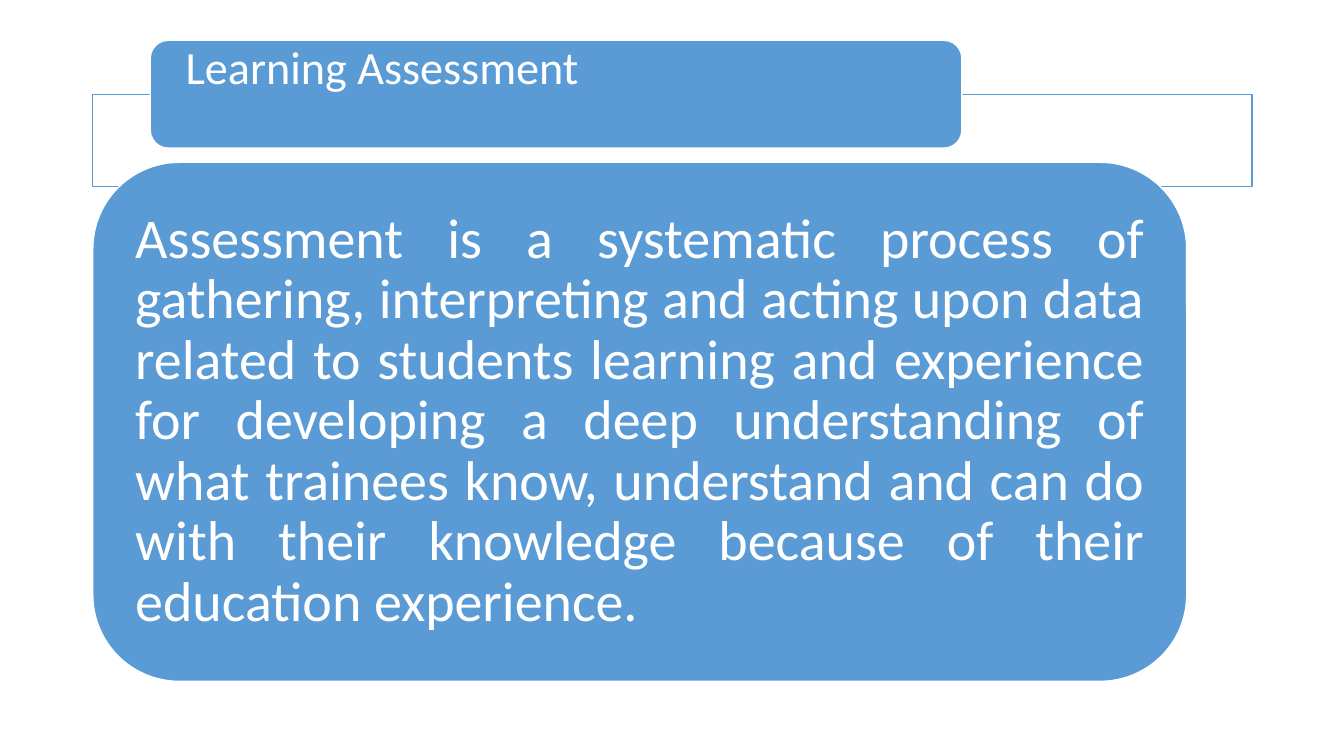
from pptx import Presentation
from pptx.dml.color import RGBColor
from pptx.enum.shapes import MSO_SHAPE
from pptx.enum.text import MSO_ANCHOR, MSO_AUTO_SIZE, PP_ALIGN
from pptx.util import Inches, Pt

# Content
HEADING = "Learning Assessment"
BODY = (
    "Assessment is a systematic process of gathering, interpreting and acting "
    "upon data related to students learning and experience for developing a "
    "deep understanding of what trainees know, understand and can do with "
    "their knowledge because of their education experience."
)

THEME = {
    "blue": RGBColor(0x5B, 0x9B, 0xD5),
    "white": RGBColor(0xFF, 0xFF, 0xFF),
    "font": "Calibri",
    "heading": Pt(33),
    "body": Pt(40),
    "line": Pt(1),
}

# Places: left, top, width, height
FRAME = (0.92, 0.94, 11.5, 0.91)
TAB = (1.49, 0.4, 8.05, 1.07)
TITLE = (1.54, 0.44, 7.95, 0.96)
PANEL = (0.92, 1.61, 10.85, 5.15)


def add_box(slide, kind, place, fill, line):
    box = slide.shapes.add_shape(kind, *map(Inches, place))
    box.shadow.inherit = False
    box.fill.solid()
    box.fill.fore_color.rgb = THEME[fill]
    box.line.color.rgb = THEME[line]
    box.line.width = THEME["line"]
    return box


def set_text(shape, text, size, align, anchor, pad_x, pad_y):
    frame = shape.text_frame
    frame.text = text
    frame.word_wrap = True
    frame.auto_size = MSO_AUTO_SIZE.NONE
    frame.vertical_anchor = anchor
    frame.margin_left = frame.margin_right = Inches(pad_x)
    frame.margin_top = frame.margin_bottom = Inches(pad_y)
    para = frame.paragraphs[0]
    para.alignment = align
    para.line_spacing = 0.9
    font = para.runs[0].font
    font.name = THEME["font"]
    font.size = THEME[size]
    font.color.rgb = THEME["white"]


def main():
    deck = Presentation()
    deck.slide_width, deck.slide_height = Inches(13.33), Inches(7.5)
    slide = deck.slides.add_slide(deck.slide_layouts[5])

    # Outlined frame and heading tab
    add_box(slide, MSO_SHAPE.RECTANGLE, FRAME, "white", "blue")
    add_box(slide, MSO_SHAPE.ROUNDED_RECTANGLE, TAB, "blue", "white")

    # Title, brought in front of the tab
    title = slide.shapes.title
    title.left, title.top, title.width, title.height = map(Inches, TITLE)
    set_text(title, HEADING, "heading", PP_ALIGN.LEFT, MSO_ANCHOR.TOP, 0.3, 0)
    slide.shapes._spTree.append(title._element)

    # Definition panel
    panel = add_box(slide, MSO_SHAPE.ROUNDED_RECTANGLE, PANEL, "blue", "white")
    set_text(panel, BODY, "body", PP_ALIGN.JUSTIFY, MSO_ANCHOR.MIDDLE, 0.17, 0.08)

    deck.save("out.pptx")


if __name__ == "__main__":
    main()
